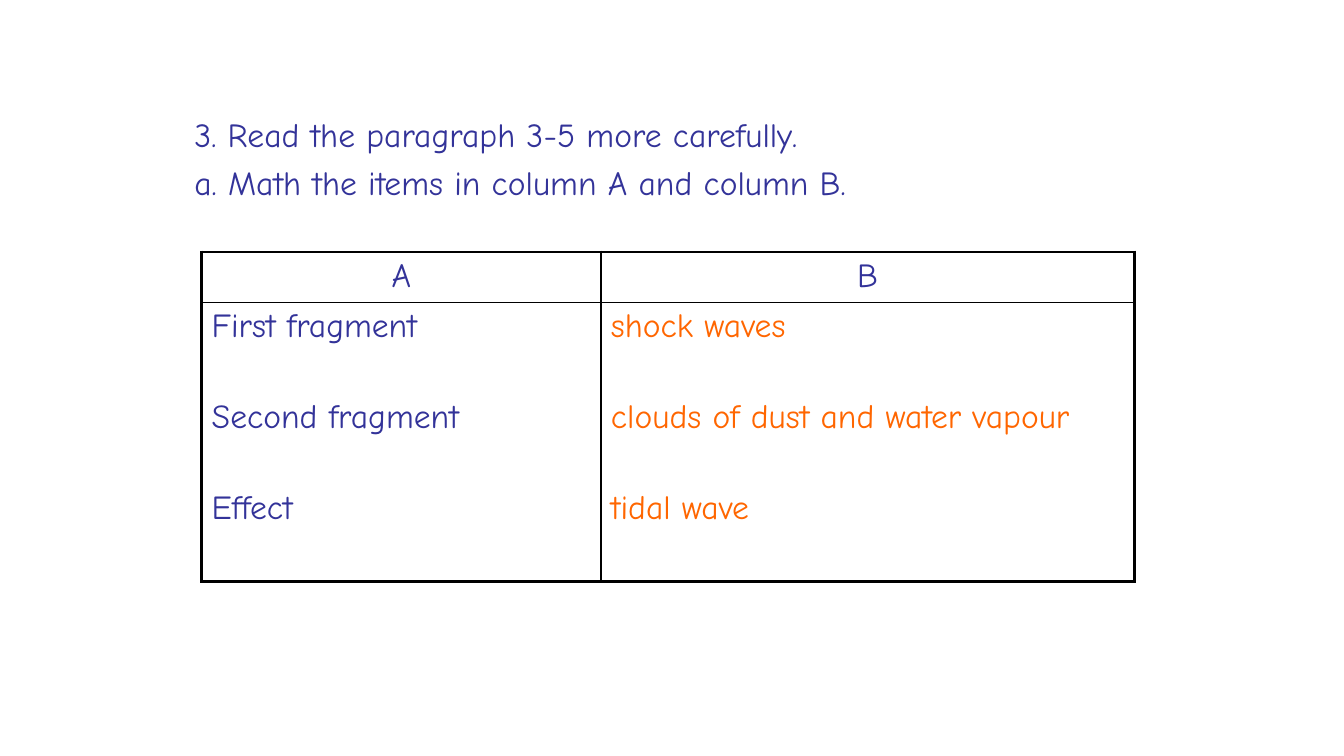
from dataclasses import dataclass

from lxml.etree import SubElement
from pptx import Presentation
from pptx.dml.color import RGBColor
from pptx.enum.text import PP_ALIGN
from pptx.oxml.ns import qn
from pptx.util import Inches, Pt


@dataclass(frozen=True)
class Theme:
    font: str = "Comic Neue"
    size: float = 24
    text: str = "333399"
    answer: str = "FF6600"
    border: str = "000000"
    outer: float = 2.25
    inner: float = 1
    line_gap: float = 5.5
    entry_gap: float = 37.4


THEME = Theme()
INSTRUCTIONS = [
    "3. Read the paragraph 3-5 more carefully.",
    "a. Math the items in column A and column B.",
]
HEADINGS = ["A", "B"]
ITEMS = ["First fragment", "Second fragment", "Effect"]
ANSWERS = ["shock waves", "clouds of dust and water vapour", "tidal wave"]


def write_lines(frame, lines, color, gap, align=PP_ALIGN.LEFT):
    frame.word_wrap = True
    for index, line in enumerate(lines):
        paragraph = frame.add_paragraph() if index else frame.paragraphs[0]
        paragraph.text = line
        paragraph.alignment = align
        if index:
            paragraph.space_before = Pt(gap)
        paragraph.font.name = THEME.font
        paragraph.font.size = Pt(THEME.size)
        paragraph.font.color.rgb = RGBColor.from_string(color)


def add_instructions(slide, left, top, width, height):
    instructions = slide.shapes.add_textbox(
        Inches(left), Inches(top), Inches(width), Inches(height)
    )
    write_lines(instructions.text_frame, INSTRUCTIONS, THEME.text, THEME.line_gap)


def draw_borders(cell, outer_sides):
    properties = cell._tc.get_or_add_tcPr()
    for side in "LRTB":
        weight = THEME.outer if side in outer_sides else THEME.inner
        border = SubElement(properties, qn(f"a:ln{side}"), w=str(Pt(weight)))
        fill = SubElement(border, qn("a:solidFill"))
        SubElement(fill, qn("a:srgbClr"), val=THEME.border)
    cell.fill.background()


def add_matching_table(slide, left, top, width, height):
    matching = slide.shapes.add_table(
        2, 2, Inches(left), Inches(top), Inches(width), Inches(height)
    ).table
    matching.first_row = False
    matching.horz_banding = False
    item_width, heading_height = 3.96, 0.49
    matching.columns[0].width = Inches(item_width)
    matching.columns[1].width = Inches(width - item_width)
    matching.rows[0].height = Inches(heading_height)
    matching.rows[1].height = Inches(height - heading_height)

    columns = zip(HEADINGS, (ITEMS, ANSWERS), (THEME.text, THEME.answer), "LR")
    for column, (heading, entries, color, side) in enumerate(columns):
        heading_cell = matching.cell(0, column)
        write_lines(heading_cell.text_frame, [heading], THEME.text, 0, PP_ALIGN.CENTER)
        draw_borders(heading_cell, side + "T")
        entries_cell = matching.cell(1, column)
        write_lines(entries_cell.text_frame, entries, color, THEME.entry_gap)
        draw_borders(entries_cell, side + "B")


def main():
    presentation = Presentation()
    presentation.slide_width = Inches(13.33)
    presentation.slide_height = Inches(7.5)
    slide = presentation.slides.add_slide(presentation.slide_layouts[6])
    add_instructions(slide, 1.83, 1.08, 10.07, 0.99)
    add_matching_table(slide, 2, 2.5, 9.25, 3.26)
    presentation.save("out.pptx")


if __name__ == "__main__":
    main()
